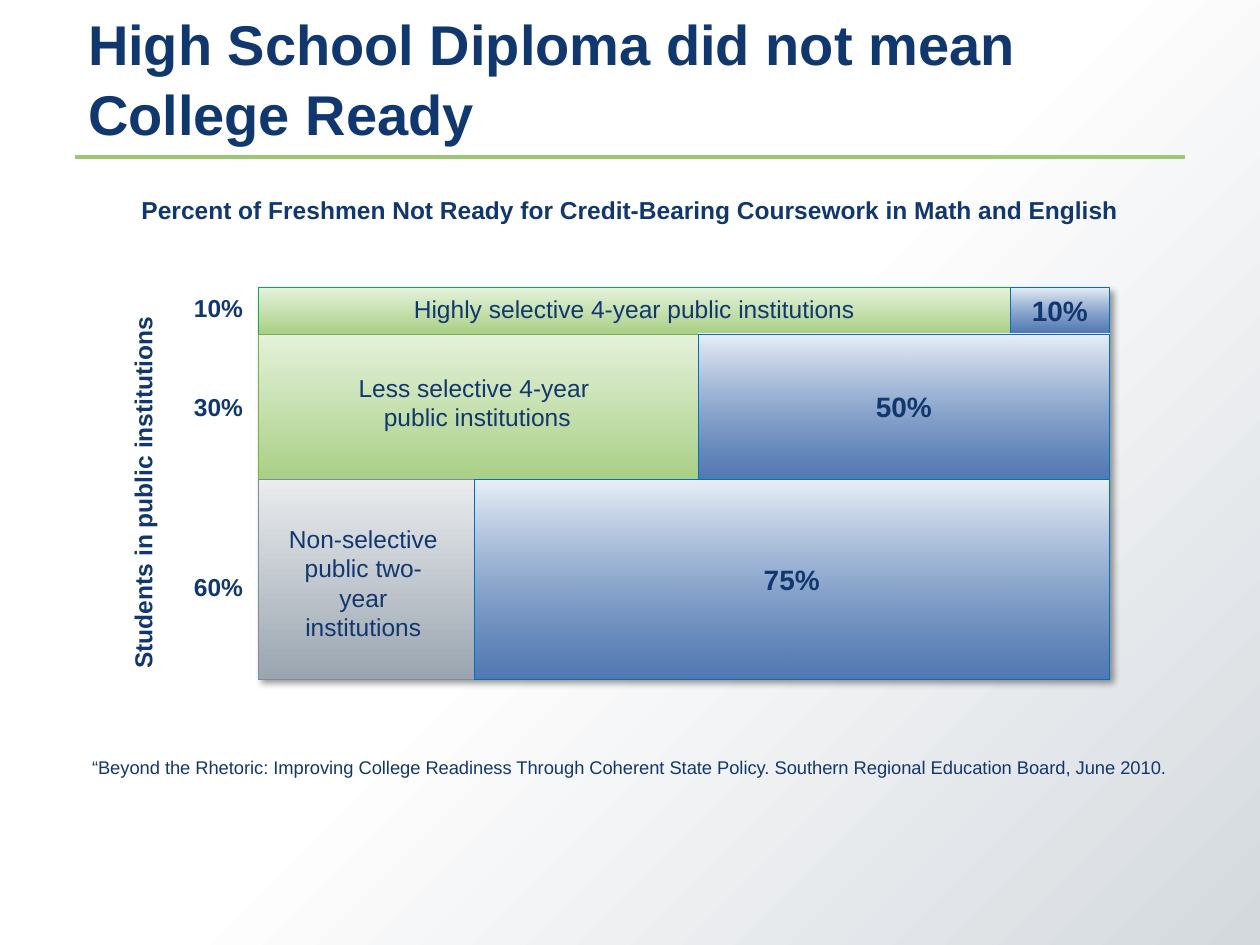
from copy import deepcopy

from lxml import etree
from pptx import Presentation
from pptx.dml.color import RGBColor
from pptx.enum.shapes import MSO_CONNECTOR, MSO_SHAPE
from pptx.enum.text import MSO_ANCHOR, MSO_AUTO_SIZE, PP_ALIGN
from pptx.oxml import parse_xml
from pptx.oxml.ns import nsdecls, qn
from pptx.util import Cm, Pt

LEFT, CENTER = PP_ALIGN.LEFT, PP_ALIGN.CENTER
TOP, MIDDLE, BOTTOM = MSO_ANCHOR.TOP, MSO_ANCHOR.MIDDLE, MSO_ANCHOR.BOTTOM
RECT, STRAIGHT = MSO_SHAPE.RECTANGLE, MSO_CONNECTOR.STRAIGHT
GROW = MSO_AUTO_SIZE.SHAPE_TO_FIT_TEXT

NAVY = "11376F"
# Gradients run from the bottom colour up to the top colour
BLUE = ("174C99", "E9EFF7")
GREEN = ("A9D086", "E5F1DB")
GREY = ("9AA5B0", "EAECEE")


def rgb(value):
    return RGBColor.from_string(value)


def write(tf, text, size=14, bold=False, align=CENTER, anchor=TOP, spacing=None):
    """Fill a text frame with one paragraph; a newline is a line break."""
    tf.word_wrap = True
    tf.vertical_anchor = anchor
    p = tf.paragraphs[0]
    p.text = text
    p.alignment = align
    if spacing:
        p.line_spacing = spacing
    for r in p.runs:
        r.font.name = "Arial"
        r.font.size = Pt(size)
        r.font.bold = bold
        r.font.color.rgb = rgb(NAVY)
    for br in p._p.findall(qn("a:br")):
        br.append(deepcopy(p.runs[0]._r.rPr))
    return p


def gradient(fill, colors, angle, start=0):
    fill.gradient()
    fill.gradient_angle = angle
    for stop, color, position in zip(fill.gradient_stops, colors, (start, 1)):
        stop.color.rgb = rgb(color)
        stop.position = position


class Slide:
    def __init__(self, prs):
        self.s = prs.slides.add_slide(prs.slide_layouts[5])
        self.shapes = self.s.shapes
        gradient(self.s.background.fill, ("FFFFFF", "D4D9DE"), 315, 0.5)

    def start_group(self):
        self.shapes = self.s.shapes.add_group_shape().shapes

    def title(self, text, x, y, w, h):
        sp = self.s.shapes.title
        sp.left, sp.top, sp.width, sp.height = Cm(x), Cm(y), Cm(w), Cm(h)
        write(sp.text_frame, text, size=32, bold=True, align=LEFT,
              anchor=BOTTOM, spacing=1.05)
        sp.text_frame.auto_size = MSO_AUTO_SIZE.NONE

    def rule(self, x1, x2, y, color, width):
        line = self.shapes.add_connector(STRAIGHT, Cm(x1), Cm(y), Cm(x2), Cm(y))
        line.line.color.rgb = rgb(color)
        line.line.width = Pt(width)
        etree.SubElement(line._element.spPr, qn("a:effectLst"))

    def text(self, text, x, y, w, h, rotation=0, **style):
        sp = self.shapes.add_textbox(Cm(x), Cm(y), Cm(w), Cm(h))
        sp.rotation = rotation
        write(sp.text_frame, text, **style)
        sp.text_frame.auto_size = GROW

    def box(self, x, y, w, h, fill, line):
        sp = self.shapes.add_shape(RECT, Cm(x), Cm(y), Cm(w), Cm(h))
        sp.shadow.inherit = False
        sp.line.color.rgb = rgb(line)
        sp.line.width = Pt(0.25)
        if isinstance(fill, str):
            sp.fill.solid()
            sp.fill.fore_color.rgb = rgb(fill)
        else:
            gradient(sp.fill, fill, 90)
        if fill == BLUE:  # the dark end is slightly transparent
            dark = sp._element.spPr.find(".//" + qn("a:srgbClr"))
            etree.SubElement(dark, qn("a:alpha"), val="75000")
        return sp

    def frame(self, x, y, w, h):
        """White backing with a soft drop shadow."""
        sp = self.box(x, y, w, h, "FFFFFF", "3A5F8C")
        sp._element.spPr.find(qn("a:effectLst")).append(parse_xml(
            f'<a:outerShdw {nsdecls("a")} blurRad="{Pt(4)}" dist="{Pt(3)}" '
            'dir="2700000" algn="tl" rotWithShape="0"><a:srgbClr val="000000">'
            '<a:alpha val="40000"/></a:srgbClr></a:outerShdw>'))


def main():
    prs = Presentation()
    prs.slide_width, prs.slide_height = Cm(25.4), Cm(19.05)
    slide = Slide(prs)

    # Heading, subtitle and citation
    slide.rule(1.52, 23.88, 3.17, "9BC872", 2)
    slide.title("High School Diploma did not mean\nCollege Ready",
                1.52, 1.52, 22.38, 1.57)
    slide.text("Percent of Freshmen Not Ready for Credit-Bearing Coursework "
               "in Math and English", 0.69, 3.81, 24.03, 0.86, bold=True)
    slide.text("“Beyond the Rhetoric: Improving College Readiness Through "
               "Coherent State Policy. Southern Regional Education Board, "
               "June 2010.", 0.89, 15.11, 23.62, 0.71, size=10.5)

    # Diagram frame and vertical axis title
    left, right, top, bottom = 5.21, 22.36, 5.8, 13.69
    slide.start_group()
    slide.frame(left, top, right - left, bottom - top)
    slide.text("Students in public institutions", -1.27, 9.5, 8.31, 0.86,
               rotation=270, bold=True)

    # Rows: top, bottom, split, share, share y, fill, line, not ready
    rows = [
        (top, 6.73, 20.37, "10%", 5.79, GREEN, "00B050", "10%"),
        (6.73, 9.66, 14.08, "30%", 7.77, GREEN, "78AF44", "50%"),
        (9.66, bottom, 9.56, "60%", 11.4, GREY, "7E8C9A", "75%"),
    ]
    for y1, y2, split, share, share_y, fill, line, not_ready in rows:
        slide.text(share, 3.66, share_y, 1.53, 0.91, bold=True, align=LEFT)
        slide.box(left, y1, split - left, y2 - y1, fill, line)
        blue = slide.box(split, y1, right - split, y2 - y1, BLUE, "0070C0")
        write(blue.text_frame, not_ready, size=16, bold=True, anchor=MIDDLE)

    # Institution names
    slide.text("Highly selective 4-year public institutions",
               left, top, 15.16, 0.94)
    slide.text("Less selective 4-year \npublic institutions",
               5.18, 7.39, 8.89, 1.57)
    slide.text("Non-selective public two-year institutions",
               5.51, 10.44, 3.63, 2.87)

    prs.save("out.pptx")


if __name__ == "__main__":
    main()
